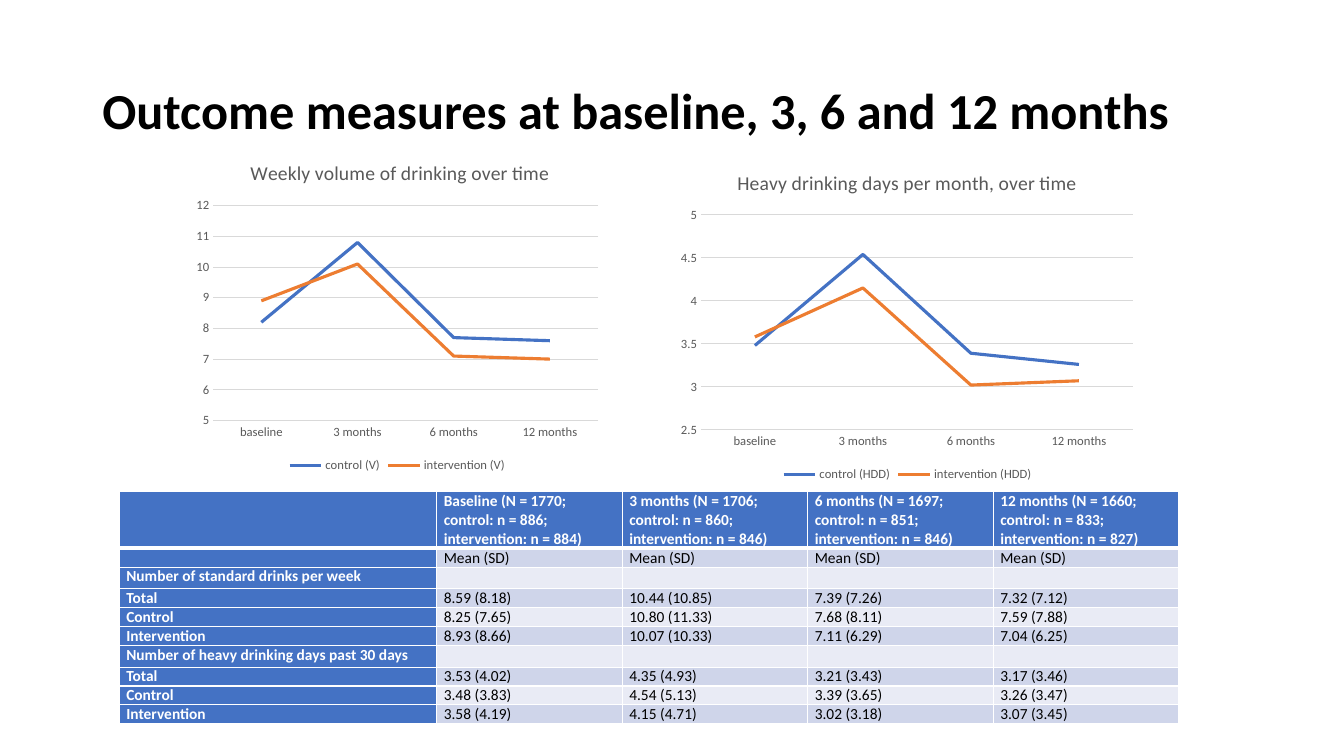
from lxml import etree
from pptx import Presentation
from pptx.chart.data import CategoryChartData
from pptx.dml.color import RGBColor
from pptx.enum.chart import XL_CHART_TYPE, XL_LEGEND_POSITION, XL_TICK_MARK
from pptx.enum.text import MSO_ANCHOR
from pptx.oxml import parse_xml
from pptx.oxml.ns import nsdecls, qn
from pptx.util import Pt

LINE = XL_CHART_TYPE.LINE
BOTTOM = XL_LEGEND_POSITION.BOTTOM
NO_TICK = XL_TICK_MARK.NONE
MIDDLE = MSO_ANCHOR.MIDDLE

THEME = {
    "font": "Calibri",
    "black": RGBColor(0x00, 0x00, 0x00),
    "white": RGBColor(0xFF, 0xFF, 0xFF),
    "grey": RGBColor(0x59, 0x59, 0x59),
    "grid": RGBColor(0xD9, 0xD9, 0xD9),
    "blue": RGBColor(0x44, 0x72, 0xC4),
    "orange": RGBColor(0xED, 0x7D, 0x31),
    "bands": (RGBColor(0xE9, 0xEB, 0xF5), RGBColor(0xCF, 0xD5, 0xEA)),
    "title": 36,
    "chart_title": 14,
    "cell": 11,
    "label": 9,
}


def write(tf, text, size, color, bold=False, spacing=None):
    p = tf.paragraphs[0]
    if spacing:
        p.line_spacing = spacing
    if not text:
        p._p.get_or_add_endParaRPr().set("sz", str(size * 100))
        return
    r = p.add_run()
    r.text = text
    r.font.name = THEME["font"]
    r.font.size = Pt(size)
    r.font.bold = bold
    r.font.color.rgb = color


def place(parent, index, inner=False, **fractions):
    for old in parent.findall(qn("c:layout")):
        parent.remove(old)
    layout = parse_xml(f"<c:layout {nsdecls('c')}><c:manualLayout/></c:layout>")
    manual = layout[0]
    if inner:
        etree.SubElement(manual, qn("c:layoutTarget")).set("val", "inner")
    for side in ("x", "y"):
        etree.SubElement(manual, qn(f"c:{side}Mode")).set("val", "edge")
    for name, value in fractions.items():
        etree.SubElement(manual, qn(f"c:{name}")).set("val", str(value))
    parent.insert(index, layout)


prs = Presentation()
prs.slide_width, prs.slide_height = Pt(960), Pt(540)
s = prs.slides.add_slide(prs.slide_layouts[6])

sp = s.shapes.add_textbox(Pt(66), Pt(28.75), Pt(828), Pt(104.4))
tf = sp.text_frame
tf.word_wrap = True
tf.vertical_anchor = MIDDLE
write(tf, "Outcome measures at baseline, 3, 6 and 12 months",
      THEME["title"], THEME["black"], bold=True, spacing=0.9)

rows = [
    ["",
     "Baseline (N = 1770; control: n = 886; intervention: n = 884)",
     "3 months (N = 1706; control: n = 860; intervention: n = 846)",
     "6 months (N = 1697; control: n = 851; intervention: n = 846)",
     "12 months (N = 1660; control: n = 833; intervention: n = 827)"],
    [""] + ["Mean (SD)"] * 4,
    ["Number of standard drinks per week"] + [""] * 4,
    ["Total", "8.59 (8.18)", "10.44 (10.85)", "7.39 (7.26)", "7.32 (7.12)"],
    ["Control", "8.25 (7.65)", "10.80 (11.33)", "7.68 (8.11)", "7.59 (7.88)"],
    ["Intervention", "8.93 (8.66)", "10.07 (10.33)", "7.11 (6.29)", "7.04 (6.25)"],
    ["Number of heavy drinking days past 30 days"] + [""] * 4,
    ["Total", "3.53 (4.02)", "4.35 (4.93)", "3.21 (3.43)", "3.17 (3.46)"],
    ["Control", "3.48 (3.83)", "4.54 (5.13)", "3.39 (3.65)", "3.26 (3.47)"],
    ["Intervention", "3.58 (4.19)", "4.15 (4.71)", "3.02 (3.18)", "3.07 (3.45)"],
]
heights = [40.5, 13.5, 15.5, 13.5, 13.5, 13.5, 15.5, 13.5, 13.5, 13.5]
widths = [226.8] + [132.5] * 4
table = s.shapes.add_table(len(rows), len(widths), Pt(85.2), Pt(351.1),
                           Pt(sum(widths)), Pt(sum(heights))).table
for column, width in zip(table.columns, widths):
    column.width = Pt(width)
for i, (row, height) in enumerate(zip(rows, heights)):
    table.rows[i].height = Pt(height)
    for j, text in enumerate(row):
        cell = table.cell(i, j)
        heading = i == 0 or j == 0
        cell.margin_left = cell.margin_right = Pt(5)
        cell.margin_top = cell.margin_bottom = 0
        cell.fill.solid()
        cell.fill.fore_color.rgb = THEME["blue"] if heading else THEME["bands"][i % 2]
        write(cell.text_frame, text, THEME["cell"],
              THEME["white"] if heading else THEME["black"], bold=heading)
        for k, side in enumerate("LRTB"):
            weight = 3 if (i, side) in ((0, "B"), (1, "T")) else 1
            cell._tc.get_or_add_tcPr().insert(k, parse_xml(
                f'<a:ln{side} {nsdecls("a")} w="{Pt(weight)}"><a:solidFill>'
                f'<a:srgbClr val="{THEME["white"]}"/></a:solidFill></a:ln{side}>'))

charts = [
    ("Weekly volume of drinking over time", "V", 4, 1, (134.4, 104.4, 298.8),
     (5, 12, 1), 0.14),
    ("Heavy drinking days per month, over time", "HDD", 8, 2, (480.5, 111, 335.5),
     (2.5, 5, 0.5), 0.13),
]
for title, measure, first_row, digits, (left, top, width), scale, title_x in charts:
    data = CategoryChartData()
    data.categories = ["baseline", "3 months", "6 months", "12 months"]
    for group, row in zip(("control", "intervention"), rows[first_row:]):
        means = [round(float(text.split()[0]), digits) for text in row[1:]]
        data.add_series(f"{group} ({measure})", means)
    chart = s.shapes.add_chart(LINE, Pt(left), Pt(top), Pt(width), Pt(236.2), data).chart
    chart.font.name = THEME["font"]
    chart.font.size = Pt(THEME["label"])
    chart.font.color.rgb = THEME["grey"]
    chart.has_title = True
    write(chart.chart_title.text_frame, title, THEME["chart_title"], THEME["grey"])
    place(chart.chart_title._element, 1, x=title_x, y=0.03)
    place(chart._chartSpace.chart.plotArea, 0, inner=True, x=0.06, y=0.18, w=0.92, h=0.65)
    chart.has_legend = True
    chart.legend.position = BOTTOM
    chart.legend.include_in_layout = False
    chart.plots[0].vary_by_categories = False
    for series, color in zip(chart.plots[0].series, (THEME["blue"], THEME["orange"])):
        series.smooth = False
        series.format.line.width = Pt(2.25)
        series.format.line.color.rgb = color
    for axis in (chart.category_axis, chart.value_axis):
        axis.major_tick_mark = axis.minor_tick_mark = NO_TICK
    axis.minimum_scale, axis.maximum_scale, axis.major_unit = scale
    axis.format.line.fill.background()
    axis.has_major_gridlines = True
    for line in (axis.major_gridlines.format.line, chart.category_axis.format.line):
        line.width = Pt(0.75)
        line.color.rgb = THEME["grid"]

prs.save("out.pptx")
